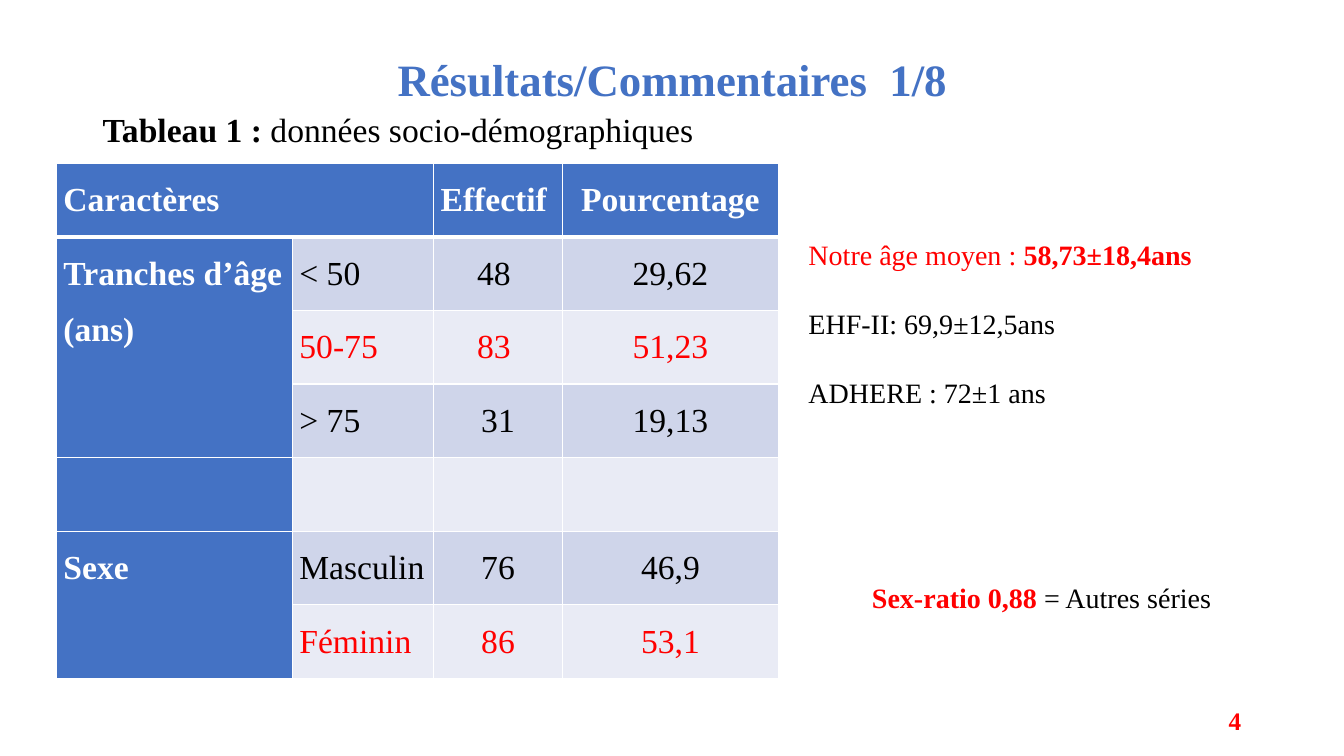
from lxml.etree import SubElement
from pptx import Presentation
from pptx.dml.color import RGBColor
from pptx.enum.text import MSO_ANCHOR as Anchor, PP_ALIGN as Align
from pptx.oxml.ns import qn
from pptx.util import Emu, Pt

PX = 9144  # EMU per px, 100 px to the inch
FONT = "Times New Roman"
COLORS = {
    "blue": "4472C4", "white": "FFFFFF", "black": "000000",
    "red": "FF0000", "dark band": "CFD5EA", "light band": "E9EBF5",
}

# A run is (text, color, bold); a paragraph is a list of runs.
TEXTS = [
    {"box": (92, 40, 1150, 75), "size": 32, "align": Align.CENTER, "anchor": Anchor.MIDDLE,
     "paragraphs": [[("Résultats/Commentaires  1/8", "blue", True)]]},
    {"box": (92, 103, 619, 50), "size": 24,
     "paragraphs": [[("Tableau 1\u00a0: ", "black", True),
                     ("données socio-démographiques", "black", False)]]},
    {"box": (792, 231, 522, 178), "size": 20, "gap": 25,
     "paragraphs": [[("Notre âge moyen : ", "red", False), ("58,73±18,4ans", "red", True)],
                    [("EHF-II: 69,9±12,5ans", "black", False)],
                    [("ADHERE : 72±1 ans", "black", False)]]},
    {"box": (855, 571, 363, 44), "size": 20,
     "paragraphs": [[("Sex-ratio 0,88", "red", True), (" = Autres séries", "black", False)]]},
    {"box": (1188, 695, 53, 40), "size": 18, "align": Align.RIGHT, "anchor": Anchor.MIDDLE,
     "paragraphs": [[("4", "red", True)]]},
]

TABLE_LEFT, TABLE_TOP, ROW_HEIGHT = 56, 162, 73
COLUMN_WIDTHS = [234, 140, 128, 214]
ROWS = [
    ("Caractères", "", "Effectif ", "Pourcentage"),
    ("Tranches d’âge (ans)", "< 50", "48 ", "29,62"),
    ("", "50-75", "83 ", "51,23"),
    ("", "> 75", "31", "19,13"),
    ("", "", "", ""),
    ("Sexe", "Masculin", "76", "46,9"),
    ("", "Féminin", "86", "53,1"),
]
MERGES = [((0, 0), (0, 1)), ((1, 0), (3, 0)), ((5, 0), (6, 0))]
RED_ROWS = {2, 6}


def rgb(name):
    return RGBColor.from_string(COLORS[name])


def add_run(paragraph, text, size, color, bold):
    run = paragraph.add_run()
    run.text = text
    run.font.name = FONT
    run.font.size = Pt(size)
    run.font.bold = bold
    run.font.color.rgb = rgb(color)


def add_text(slide, box, size, paragraphs, align=Align.LEFT, anchor=Anchor.TOP, gap=0):
    shape = slide.shapes.add_textbox(*(Emu(length * PX) for length in box))
    frame = shape.text_frame
    frame.word_wrap = True
    frame.vertical_anchor = anchor
    for index, runs in enumerate(paragraphs):
        paragraph = frame.add_paragraph() if index else frame.paragraphs[0]
        paragraph.alignment = align
        if index:
            paragraph.space_before = Pt(gap)
        for text, color, bold in runs:
            add_run(paragraph, text, size, color, bold)


def set_borders(cell, row):
    """White rules of 1 pt, with 3 pt under the header row."""
    properties = cell._tc.get_or_add_tcPr()
    widths = {"a:lnL": 1, "a:lnR": 1, "a:lnT": 3 if row == 1 else 1, "a:lnB": 3 if row == 0 else 1}
    for tag, width in widths.items():
        line = SubElement(properties, qn(tag), w=str(Pt(width)))
        fill = SubElement(line, qn("a:solidFill"))
        SubElement(fill, qn("a:srgbClr"), val=COLORS["white"])


def fill_cell(cell, row, column, text):
    heading = row == 0 or column == 0
    set_borders(cell, row)
    cell.fill.solid()
    cell.fill.fore_color.rgb = rgb("blue" if heading else "dark band" if row % 2 else "light band")
    cell.margin_left = cell.margin_right = Emu(7 * PX)
    cell.margin_top = cell.margin_bottom = 0
    if text:
        paragraph = cell.text_frame.paragraphs[0]
        paragraph.alignment = Align.CENTER if column > 1 else Align.LEFT
        paragraph.line_spacing = 1.5
        color = "white" if heading else "red" if row in RED_ROWS else "black"
        add_run(paragraph, text, 24, color, heading)


def add_data_table(slide):
    size = (sum(COLUMN_WIDTHS), len(ROWS) * ROW_HEIGHT)
    box = (Emu(length * PX) for length in (TABLE_LEFT, TABLE_TOP, *size))
    table = slide.shapes.add_table(len(ROWS), len(COLUMN_WIDTHS), *box).table
    for column, width in zip(table.columns, COLUMN_WIDTHS):
        column.width = Emu(width * PX)
    for row, texts in enumerate(ROWS):
        table.rows[row].height = Emu(ROW_HEIGHT * PX)
        for column, text in enumerate(texts):
            fill_cell(table.cell(row, column), row, column, text)
    for first, last in MERGES:
        table.cell(*first).merge(table.cell(*last))


def main():
    presentation = Presentation()
    presentation.slide_width = Emu(1333 * PX)
    presentation.slide_height = Emu(750 * PX)
    slide = presentation.slides.add_slide(presentation.slide_layouts[6])
    add_data_table(slide)
    for text in TEXTS:
        add_text(slide, **text)
    presentation.save("out.pptx")


if __name__ == "__main__":
    main()
